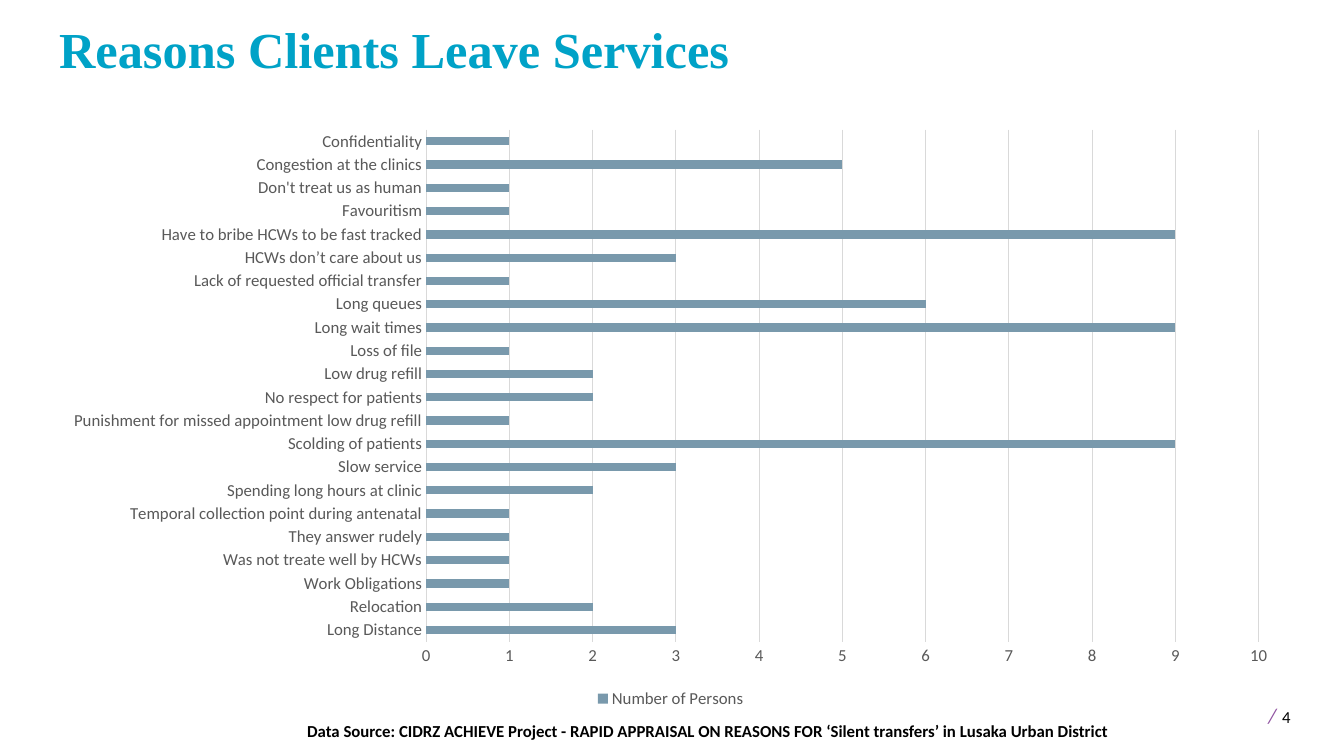
from pptx import Presentation
from pptx.chart.data import CategoryChartData as ChartData
from pptx.dml.color import RGBColor
from pptx.enum.chart import (XL_CHART_TYPE as Kind, XL_LEGEND_POSITION as Spot,
                             XL_TICK_MARK as Tick)
from pptx.enum.text import MSO_ANCHOR as Anchor
from pptx.util import Cm, Pt

BLACK = RGBColor(0x00, 0x00, 0x00)
TEAL = RGBColor(0x00, 0xA2, 0xC7)
PURPLE = RGBColor(0x90, 0x53, 0xA1)
STEEL = RGBColor(0x79, 0x99, 0xAC)
GREY = RGBColor(0x59, 0x59, 0x59)
PALE = RGBColor(0xD9, 0xD9, 0xD9)
SANS = "Calibri"
SERIF = "Times New Roman"

REASONS = [
    ("Long Distance", 3),
    ("Relocation", 2),
    ("Work Obligations", 1),
    ("Was not treate well by HCWs", 1),
    ("They answer rudely", 1),
    ("Temporal collection point during antenatal", 1),
    ("Spending long hours at clinic", 2),
    ("Slow service", 3),
    ("Scolding of patients", 9),
    ("Punishment for missed appointment low drug refill", 1),
    ("No respect for patients", 2),
    ("Low drug refill", 2),
    ("Loss of file", 1),
    ("Long wait times", 9),
    ("Long queues", 6),
    ("Lack of requested official transfer", 1),
    ("HCWs don’t care about us", 3),
    ("Have to bribe HCWs to be fast tracked", 9),
    ("Favouritism", 1),
    ("Don't treat us as human", 1),
    ("Congestion at the clinics", 5),
    ("Confidentiality", 1),
]


def style(font, size, color, name=SANS, bold=False):
    font.size = Pt(size)
    font.color.rgb = color
    font.name = name
    font.bold = bold


def add_text(slide, box, parts, anchor=Anchor.TOP):
    """Add one line made of (text, size, color, name, bold) parts."""
    frame = slide.shapes.add_textbox(*box).text_frame
    frame.word_wrap = True
    frame.vertical_anchor = anchor
    line = frame.paragraphs[0]
    for words, *look in parts:
        run = line.add_run()
        run.text = words
        style(run.font, *look)
    return line


def add_title(slide, box):
    parts = [("Reasons Clients Leave Services", 36, TEAL, SERIF, True)]
    add_text(slide, box, parts, Anchor.BOTTOM).line_spacing = 0.9


def add_source(slide, box):
    words = ("Data Source: CIDRZ ACHIEVE Project - RAPID APPRAISAL ON REASONS "
             "FOR ‘Silent transfers’ in Lusaka Urban District")
    add_text(slide, box, [(words, 12, BLACK, SANS, True)])


def add_number(slide, box):
    parts = [(" ", 18, BLACK), ("/", 15, PURPLE), (" ", 18, BLACK),
             ("4", 12, BLACK)]
    line = add_text(slide, box, parts)
    line.runs[1].font.italic = True


def add_bars(slide, box):
    data = ChartData(number_format="General")
    data.categories = [name for name, count in REASONS]
    data.add_series("Number of Persons", [count for name, count in REASONS])
    chart = slide.shapes.add_chart(Kind.BAR_CLUSTERED, *box, data).chart
    style(chart.font, 10, BLACK)
    chart.has_title = False

    chart.has_legend = True
    chart.legend.position = Spot.BOTTOM
    chart.legend.include_in_layout = False
    style(chart.legend.font, 12, GREY)

    plot = chart.plots[0]
    plot.gap_width = 182
    plot.vary_by_categories = False
    fill = plot.series[0].format.fill
    fill.solid()
    fill.fore_color.rgb = STEEL

    names, counts = chart.category_axis, chart.value_axis
    for axis in (names, counts):
        axis.major_tick_mark = axis.minor_tick_mark = Tick.NONE
        style(axis.tick_labels.font, 12, GREY)
    counts.minimum_scale, counts.maximum_scale = 0, 10
    counts.major_unit = 1
    counts.has_major_gridlines = True
    counts.format.line.fill.background()
    for line in (names.format.line, counts.major_gridlines.format.line):
        line.color.rgb = PALE
        line.width = Pt(0.75)


def main():
    deck = Presentation()
    deck.slide_width, deck.slide_height = Cm(33.87), Cm(19.05)
    slide = deck.slides.add_slide(deck.slide_layouts[6])
    add_number(slide, (Cm(31.57), Cm(17.48), Cm(2.21), Cm(1.02)))
    add_bars(slide, (Cm(1.24), Cm(2.97), Cm(31.32), Cm(14.99)))
    add_title(slide, (Cm(1.24), Cm(0.25), Cm(30.86), Cm(1.88)))
    add_source(slide, (Cm(7.49), Cm(18.03), Cm(21.08), Cm(0.76)))
    deck.save("out.pptx")


if __name__ == "__main__":
    main()
